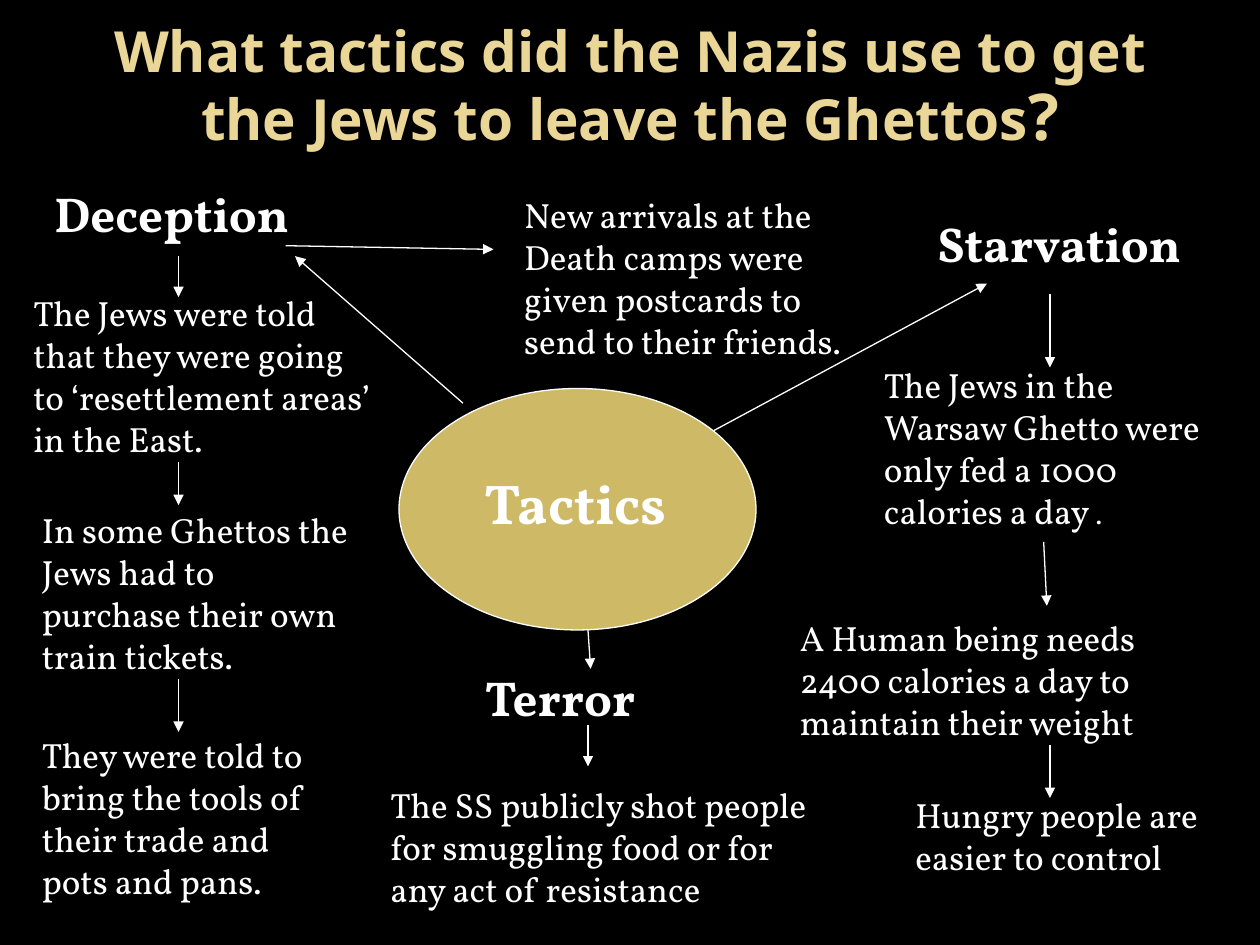
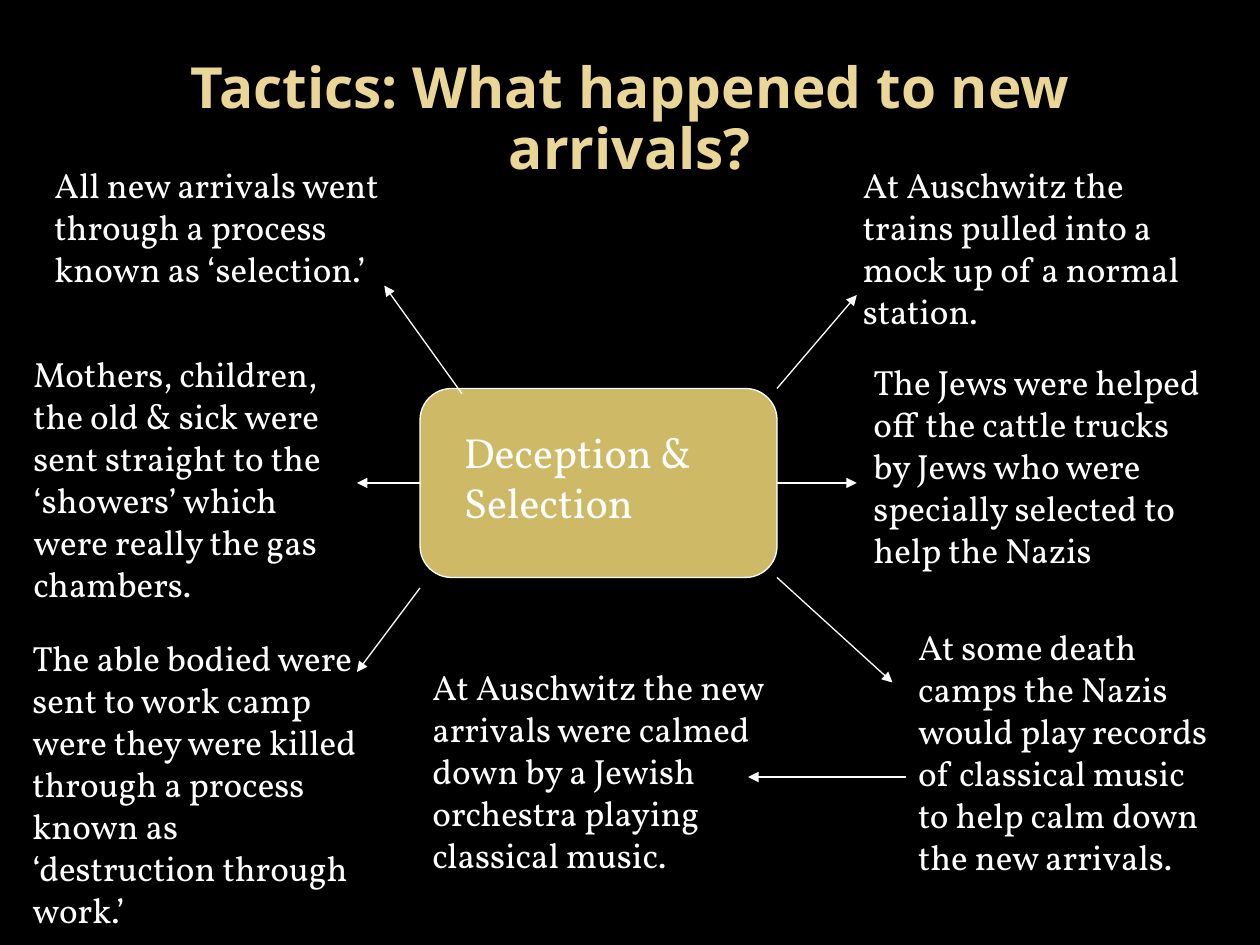
from pptx import Presentation
from pptx.dml.color import RGBColor
from pptx.enum.shapes import MSO_CONNECTOR, MSO_SHAPE
from pptx.enum.text import MSO_ANCHOR, MSO_AUTO_SIZE, PP_ALIGN
from pptx.oxml.ns import qn
from pptx.util import Inches, Pt
from lxml.etree import SubElement

BLACK = RGBColor(0x00, 0x00, 0x00)
WHITE = RGBColor(0xFF, 0xFF, 0xFF)
GOLD = RGBColor(0xCE, 0xB9, 0x66)
CREAM = RGBColor(0xEA, 0xD6, 0x96)
HEAD_FONT, BODY_FONT = "Noto Sans", "Vollkorn"
COLS, ROWS = 120, 90


class Deck:
    """Holds the style and the current slide; lengths are grid columns and rows."""

    def __init__(self):
        self.show = Presentation()
        self.show.slide_width, self.show.slide_height = Inches(10), Inches(7.5)
        fill = self.show.slide_master.background.fill
        fill.solid()
        fill.fore_color.rgb = BLACK
        self.slide = None

    def grid(self, col, row):
        return (round(self.show.slide_width * col / COLS),
                round(self.show.slide_height * row / ROWS))

    def style(self, run, size, bold, name, color):
        font = run.font
        font.size, font.bold, font.name = Pt(size), bold, name
        font.color.rgb = color

    def page(self, title, row, high, mark=""):
        """Start a slide; mark is a larger sign that ends the title."""
        self.slide = self.show.slides.add_slide(self.show.slide_layouts[5])
        head = self.slide.shapes.title
        head.left, head.top = self.grid(9, row)
        head.width, head.height = self.grid(102, high)
        frame = head.text_frame
        frame.text = title
        frame.word_wrap = True
        frame.auto_size = MSO_AUTO_SIZE.NONE
        frame.vertical_anchor = MSO_ANCHOR.MIDDLE
        para = frame.paragraphs[0]
        para.alignment, para.line_spacing = PP_ALIGN.CENTER, 0.9
        self.style(para.runs[0], 32.4, True, HEAD_FONT, CREAM)
        if mark:
            run = para.add_run()
            run.text = mark
            self.style(run, 36.9, True, HEAD_FONT, CREAM)

    def hub(self, kind, col, row, wide, high):
        shape = self.slide.shapes.add_shape(
            kind, *self.grid(col, row), *self.grid(wide, high))
        shape.shadow.inherit = False
        shape.fill.solid()
        shape.fill.fore_color.rgb = GOLD
        shape.line.color.rgb = WHITE
        shape.line.width = Pt(0.75)

    def note(self, text, col, row, wide, lines, size=20, bold=False, stop=""):
        """Add a text box as tall as its lines; stop is a smaller closing sign."""
        high = Inches(0.1) + Pt(size * 1.2 * lines)
        box = self.slide.shapes.add_textbox(
            *self.grid(col, row), self.grid(wide, 0)[0], high)
        frame = box.text_frame
        frame.text = text
        frame.word_wrap = True
        frame.auto_size = MSO_AUTO_SIZE.SHAPE_TO_FIT_TEXT
        para = frame.paragraphs[0]
        self.style(para.runs[0], size, bold, BODY_FONT, WHITE)
        if stop:
            run = para.add_run()
            run.text = stop
            self.style(run, 16, bold, BODY_FONT, WHITE)

    def label(self, text, col, row, wide, size=28):
        self.note(text, col, row, wide, 1, size, True)

    def arrow(self, start, end):
        line = self.slide.shapes.add_connector(
            MSO_CONNECTOR.STRAIGHT, *self.grid(*start), *self.grid(*end))
        line.line.color.rgb = WHITE
        line.line.width = Pt(0.75)
        props = line.line._get_or_add_ln()
        SubElement(props, qn("a:tailEnd"), type="triangle")
        SubElement(props.getparent(), qn("a:effectLst"))


def ghettos(deck):
    deck.page("What tactics did the Nazis use to get the Jews to leave the Ghettos",
              0, 16.9, "?")
    deck.hub(MSO_SHAPE.OVAL, 38, 37, 34, 23)
    deck.label("Tactics", 45, 44, 21, 32)
    deck.label("Starvation", 88.1, 19.7, 31.9)
    deck.label("Terror", 45, 63, 22)
    deck.label("Deception", 4, 16.9, 28.8)

    for text, col, row, wide, lines in (
        ("A Human being needs 2400 calories a day to maintain their weight",
         75, 58.1, 42, 3),
        ("Hungry people are easier to control", 86, 75, 30, 2),
        ("The SS publicly shot people for smuggling food or for any act of resistance",
         36, 74, 42, 3),
        ("The Jews were told that they were going to ‘resettlement areas’ in the East.",
         2, 27.2, 34.5, 4),
        ("In some Ghettos the Jews had to purchase their own train tickets.",
         2.8, 47.8, 32.6, 4),
        ("They were told to bring the tools of their trade and pots and pans.",
         2.8, 69.3, 30, 4),
        ("New arrivals at the Death camps were given postcards to send to their friends.",
         48.75, 17.8, 33.75, 4),
    ):
        deck.note(text, col, row, wide, lines)
    deck.note("The Jews in the Warsaw Ghetto were only fed a 1000 calories a day ",
              83, 34, 33, 4, stop=".")

    for col, top, end in ((17, 24.4, 28.3), (17, 44, 48.1), (17, 64.7, 69.7),
                          (56, 69, 73), (100, 28, 35), (100, 71, 76)):
        deck.arrow((col, top), (col, end))
    for start, end in (
        ((68, 41), (94, 27)),
        ((99.4, 51.6), (99.7, 57.7)),
        ((56, 60), (56.25, 63.7)),
        ((44.1, 38.4), (28.1, 24.4)),
        ((27.2, 23.4), (47, 23.75)),
    ):
        deck.arrow(start, end)


def arrivals(deck):
    deck.page("Tactics: What happened to new arrivals?", 5, 13)
    deck.hub(MSO_SHAPE.FLOWCHART_ALTERNATE_PROCESS, 40, 37, 34, 18)
    deck.note("Deception & Selection", 43, 40, 30, 2, 24)

    for text, col, row, wide, lines in (
        ("At Auschwitz the trains pulled into a mock up of a normal station.",
         81, 15, 35, 4),
        ("The Jews were helped off the cattle trucks by Jews who were specially "
         "selected to help the Nazis", 82, 33.75, 34.2, 6),
        ("At some death camps the Nazis would play records of classical music "
         "to help calm down the new arrivals.", 86.25, 59, 30.75, 7),
        ("At Auschwitz the new arrivals were calmed down by a Jewish orchestra "
         "playing classical music.", 40, 62.75, 36, 5),
        ("All new arrivals went through a process known as ‘selection.’",
         4, 15, 37.2, 3),
        ("Mothers, children, the old & sick were sent straight to the ‘showers’ "
         "which were really the gas chambers.", 2, 33, 33, 6),
        ("The able bodied were sent to work camp were they were killed through "
         "a process known as ‘destruction through work.’", 1.9, 60, 34.1, 7),
    ):
        deck.note(text, col, row, wide, lines)

    for start, end in (
        ((74, 37), (81.6, 28.1)),
        ((74, 46), (81.6, 46)),
        ((74, 55), (85, 65)),
        ((86.25, 74), (71.25, 74)),
        ((44, 37.5), (36.6, 27.2)),
        ((40, 46), (34, 46)),
        ((40, 56), (34, 64)),
    ):
        deck.arrow(start, end)


def main():
    deck = Deck()
    ghettos(deck)
    arrivals(deck)
    deck.show.save("out.pptx")


if __name__ == "__main__":
    main()
